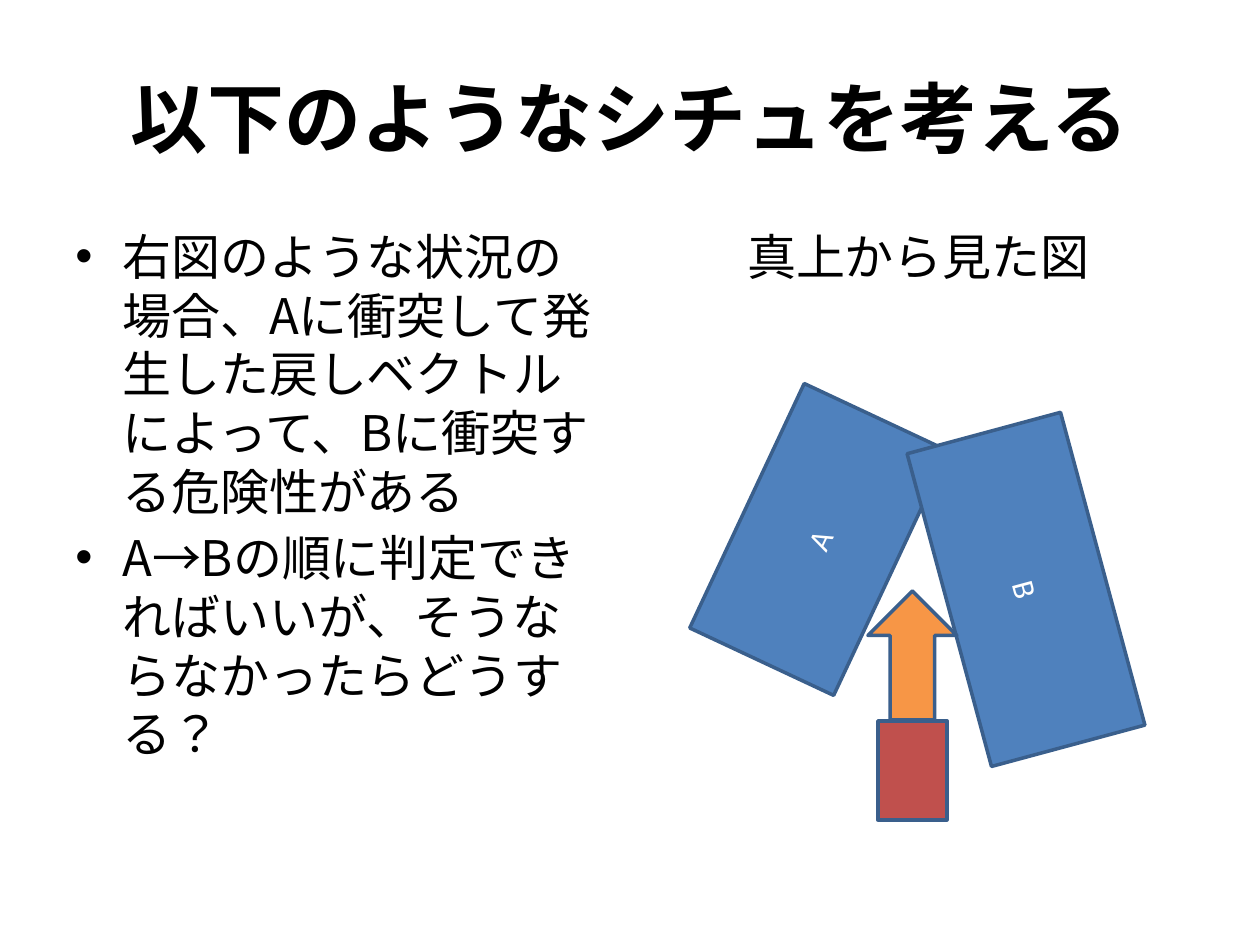
from lxml import etree
from pptx import Presentation
from pptx.dml.color import RGBColor
from pptx.enum.lang import MSO_LANGUAGE_ID
from pptx.enum.shapes import MSO_SHAPE
from pptx.enum.text import MSO_ANCHOR, PP_ALIGN
from pptx.oxml.ns import qn
from pptx.util import Pt

RECT, UP_ARROW = MSO_SHAPE.RECTANGLE, MSO_SHAPE.UP_ARROW
LEFT, CENTER = PP_ALIGN.LEFT, PP_ALIGN.CENTER
TOP, MIDDLE = MSO_ANCHOR.TOP, MSO_ANCHOR.MIDDLE
JAPANESE = MSO_LANGUAGE_ID.JAPANESE

PX = 914400 // 126  # EMU in one px

THEME = {
    "font": "Noto Sans CJK JP",
    "label_font": "Calibri",
    "text": "000000",
    "label": "FFFFFF",
    "wall": "4F81BD",
    "player": "C0504D",
    "motion": "F79646",
    "outline": "3A5F8C",
    "title_size": 44,
    "body_size": 28,
    "label_size": 18,
}


def write(frame, *lines, size=THEME["body_size"], font=THEME["font"], color=THEME["text"],
          bold=False, align=LEFT, anchor=TOP, bullet=None, gap=0):
    frame.word_wrap = True
    frame.vertical_anchor = anchor
    for index, line in enumerate(lines):
        para = frame.paragraphs[0] if index == 0 else frame.add_paragraph()
        para.alignment = align
        para.space_before = Pt(gap)
        if bullet:
            props = para._p.get_or_add_pPr()
            props.set("marL", str(47 * PX))
            props.set("indent", str(-47 * PX))
            etree.SubElement(props, qn("a:buFont")).set("typeface", "Arial")
            etree.SubElement(props, qn("a:buChar")).set("char", bullet)
        span = para.add_run()
        span.text = line
        span.font.size = Pt(size)
        span.font.bold = bold
        span.font.name = font
        span.font.language_id = JAPANESE
        span.font.color.rgb = RGBColor.from_string(color)
        east_asian = etree.SubElement(span.font._element, qn("a:ea"))
        east_asian.set("typeface", THEME["font"])


deck = Presentation()
deck.slide_width, deck.slide_height = 1260 * PX, 945 * PX
page = deck.slides.add_slide(deck.slide_layouts[6])

# Title and the two text columns
texts = [
    ((63, 38, 1134, 157), ["以下のようなシチュを考える"],
     dict(size=THEME["title_size"], bold=True, align=CENTER, anchor=MIDDLE)),
    ((63, 220, 557, 624),
     ["右図のような状況の場合、Aに衝突して発生した戻しベクトルによって、Bに衝突する危険性がある",
      "A→Bの順に判定できればいいが、そうならなかったらどうする？"],
     dict(bullet="•", gap=4)),
    ((640, 220, 557, 624), ["真上から見た図"], dict(align=CENTER, gap=4)),
]
for place, lines, style in texts:
    box = page.shapes.add_textbox(*(length * PX for length in place))
    write(box.text_frame, *lines, **style)

# Top view: two walls, the player and its direction of motion
parts = [
    (RECT, (684, 460, 270, 159), 295.1, "wall", "A"),
    (RECT, (864, 510, 324, 159), 74.9, "wall", "B"),
    (RECT, (878, 721, 69, 99), 0, "player", ""),
    (UP_ARROW, (868, 591, 89, 129), 0, "motion", ""),
]
for kind, place, angle, fill, label in parts:
    part = page.shapes.add_shape(kind, *(length * PX for length in place))
    part.rotation = angle
    part.shadow.inherit = False
    part.fill.solid()
    part.fill.fore_color.rgb = RGBColor.from_string(THEME[fill])
    part.line.color.rgb = RGBColor.from_string(THEME["outline"])
    part.line.width = Pt(2)
    if label:
        write(part.text_frame, label, size=THEME["label_size"], font=THEME["label_font"],
              color=THEME["label"], align=CENTER, anchor=MIDDLE)

deck.save("out.pptx")
